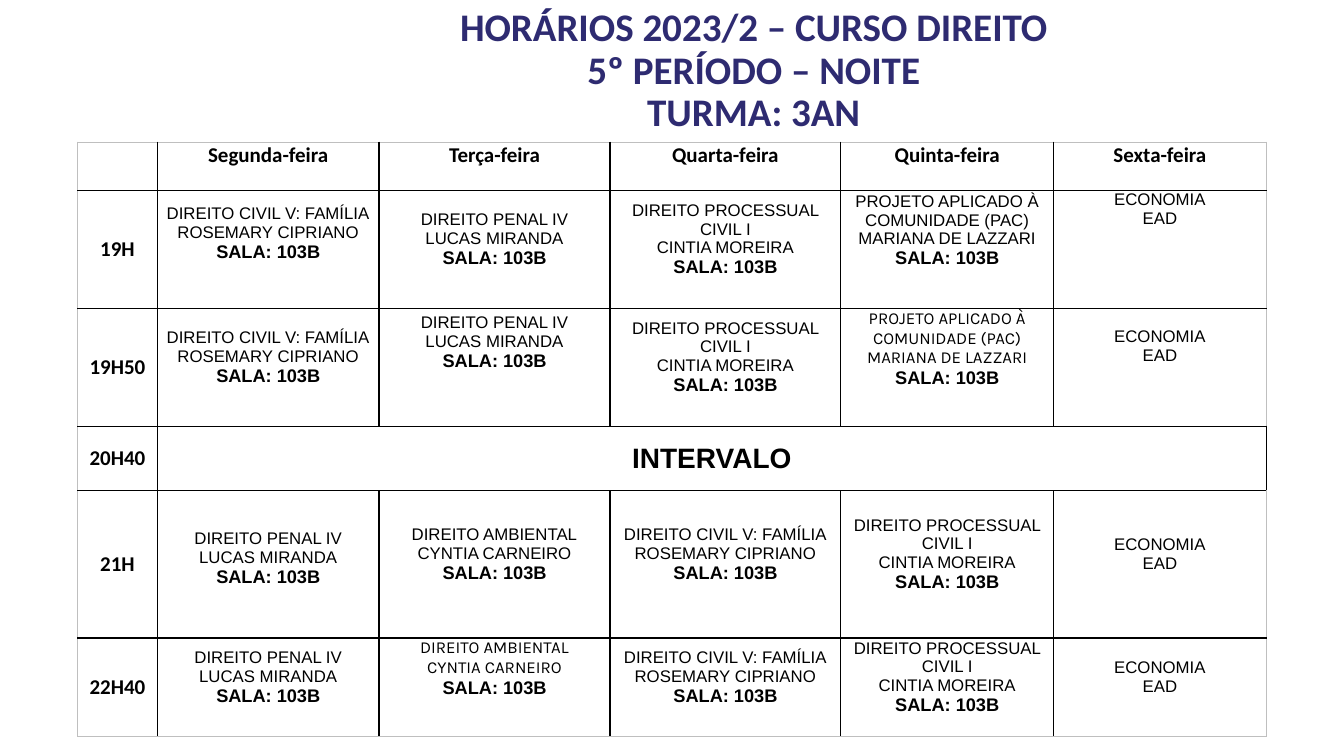
"""Builds the weekly evening timetable slide of a law course."""
from dataclasses import dataclass

from lxml import etree
from pptx import Presentation
from pptx import util as u
from pptx.dml.color import RGBColor
from pptx.enum import text
from pptx.oxml.ns import qn


@dataclass(frozen=True)
class Theme:
    navy: str = "2E2B71"
    black: str = "000000"
    frame: str = "BFBFBF"
    title: float = 27.9
    interval: float = 20
    heading: float = 15
    room: float = 13
    lesson: float = 12
    head_font: str = "Calibri"
    body_font: str = "Arial"
    alt_font: str = "Karla"


theme = Theme()


def style(paragraph, size, font, bold, color=theme.black):
    paragraph.alignment = text.PP_ALIGN.CENTER
    for run in paragraph.runs:
        run.font.size = u.Pt(size)
        run.font.name = font
        run.font.bold = bold
        run.font.color.rgb = RGBColor.from_string(color)


def fill_cell(cell, lines, formats, anchor=text.MSO_ANCHOR.MIDDLE, top=0, bottom=0):
    cell.text_frame.text = "\n".join(lines)
    cell.vertical_anchor = anchor
    cell.margin_top, cell.margin_bottom = u.Inches(top), u.Inches(bottom)
    for paragraph, (size, font, bold) in zip(cell.text_frame.paragraphs, formats):
        style(paragraph, size, font, bold)


days = ["Segunda-feira", "Terça-feira", "Quarta-feira", "Quinta-feira", "Sexta-feira"]
room = "SALA: 103B"
civil = ["DIREITO CIVIL V: FAMÍLIA", "ROSEMARY CIPRIANO", room]
penal = ["DIREITO PENAL IV", "LUCAS MIRANDA", room]
processual = ["DIREITO PROCESSUAL CIVIL I", "CINTIA MOREIRA", room]
projeto = ["PROJETO APLICADO À COMUNIDADE (PAC)", "MARIANA DE LAZZARI", room]
projeto_joined = ["PROJETO APLICADO À COMUNIDADE (PAC)", *projeto[1:]]
ambiental = ["DIREITO AMBIENTAL", "CYNTIA CARNEIRO", room]
economia = ["ECONOMIA", "EAD"]

timetable = {
    "19H": [civil, penal, processual, projeto, economia],
    "19H50": [civil, penal, processual, projeto_joined, economia],
    "20H40": [],
    "21H": [penal, ambiental, civil, processual, economia],
    "22H40": [penal, ambiental, civil, processual, economia],
}
usual_gap = 0.2
bottom_gaps = {(1, 1): 0.32, (1, 4): 0.38, (2, 2): 0.5, (2, 4): 0.37,
               (4, 1): 0.12, (5, 2): 0.38}
top_gaps = {(1, 5): 0, (2, 5): 0.19}
alt_font_cells = {(2, 4), (5, 2)}
column_widths = [0.79, 2.2, 2.29, 2.29, 2.11, 2.11]
row_heights = [0.48, 1.17, 1.17, 0.64, 1.46, 0.98]

prs = Presentation()
prs.slide_width, prs.slide_height = u.Inches(13.33), u.Inches(7.5)
slide = prs.slides.add_slide(prs.slide_layouts[5])

title = slide.shapes.title
title.left, title.top = u.Inches(3.28), u.Inches(0.21)
title.width, title.height = u.Inches(8.39), u.Inches(1.45)
title.text_frame.text = "HORÁRIOS 2023/2 – CURSO DIREITO\v5º PERÍODO – NOITE\vTURMA: 3AN"
title.text_frame.auto_size = text.MSO_AUTO_SIZE.NONE
title.text_frame.vertical_anchor = text.MSO_ANCHOR.MIDDLE
title.text_frame.margin_bottom = u.Inches(0.5)
title.text_frame.paragraphs[0].line_spacing = 0.9
style(title.text_frame.paragraphs[0], theme.title, theme.head_font, True, theme.navy)

table = slide.shapes.add_table(
    len(row_heights), len(column_widths),
    u.Inches(0.77), u.Inches(1.41), u.Inches(11.8), u.Inches(6.09)).table
table.first_row = table.horz_banding = False
for column, width in zip(table.columns, column_widths):
    column.width = u.Inches(width)
for row, height in zip(table.rows, row_heights):
    row.height = u.Inches(height)

heading = [(theme.heading, theme.head_font, True)]
for col, day in enumerate(days, 1):
    fill_cell(table.cell(0, col), [day], heading, text.MSO_ANCHOR.TOP)

for row, (hour, lessons) in enumerate(timetable.items(), 1):
    fill_cell(table.cell(row, 0), [hour], heading)
    if not lessons:
        table.cell(row, 1).merge(table.cell(row, len(days)))
        fill_cell(table.cell(row, 1), ["INTERVALO"], [(theme.interval, theme.body_font, True)])
    for col, lesson in enumerate(lessons, 1):
        font = theme.alt_font if (row, col) in alt_font_cells else theme.body_font
        formats = [(theme.lesson, font, False)] * 2 + [(theme.room, theme.body_font, True)]
        if (row, col) in top_gaps:
            fill_cell(table.cell(row, col), lesson, formats,
                      text.MSO_ANCHOR.TOP, top=top_gaps[row, col])
        else:
            fill_cell(table.cell(row, col), lesson, formats,
                      bottom=bottom_gaps.get((row, col), usual_gap))

last_row, last_col = len(row_heights) - 1, len(column_widths) - 1
for row in range(last_row + 1):
    for col in range(last_col + 1):
        cell = table.cell(row, col)
        cell.margin_left = cell.margin_right = u.Inches(0.05)
        cell.fill.background()
        outer = {"a:lnL": col == 0, "a:lnR": col == last_col,
                 "a:lnT": row == 0, "a:lnB": row == last_row}
        for position, (side, on_frame) in enumerate(outer.items()):
            line = etree.Element(qn(side), w=str(u.Pt(1)))
            paint = etree.SubElement(line, qn("a:solidFill"))
            etree.SubElement(paint, qn("a:srgbClr"), val=theme.frame if on_frame else theme.black)
            cell._tc.get_or_add_tcPr().insert(position, line)

prs.save("out.pptx")
